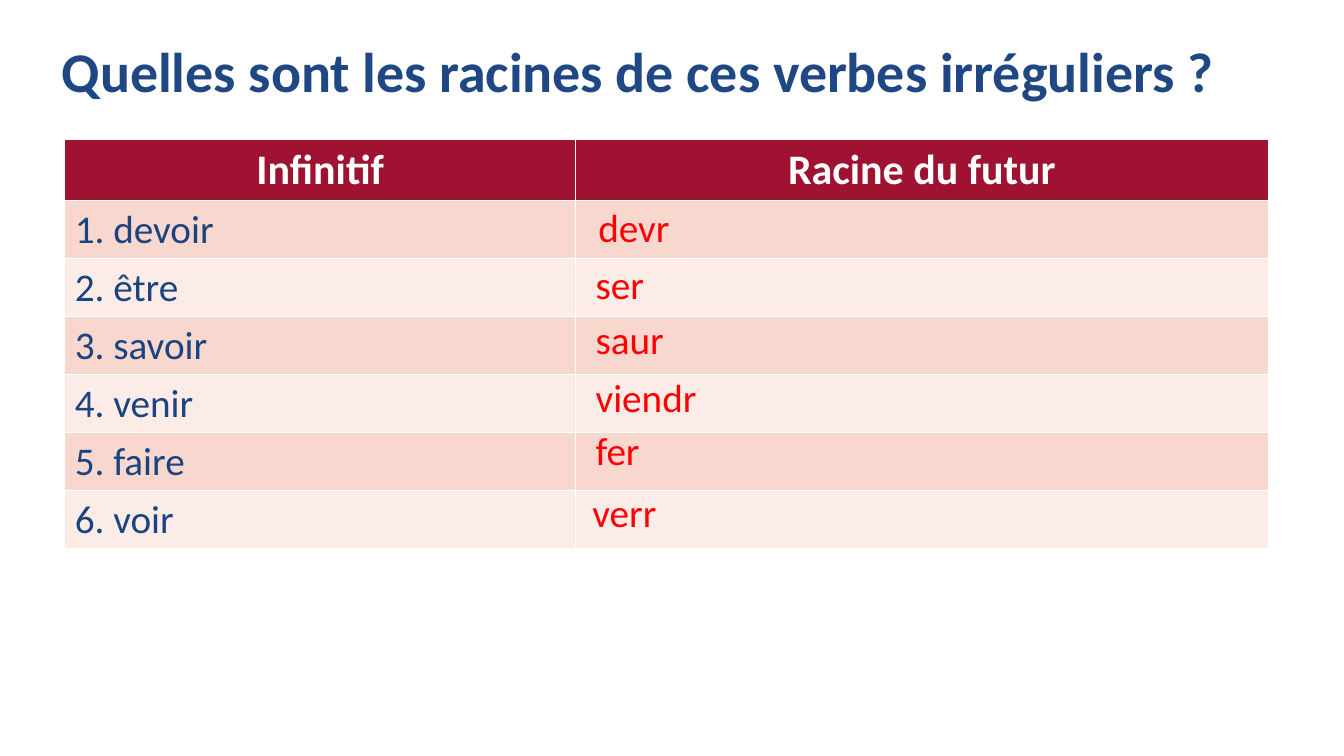
from pptx import Presentation
from pptx.dml.color import RGBColor
from pptx.enum.text import MSO_ANCHOR as Anchor, MSO_AUTO_SIZE as AutoSize, PP_ALIGN as Align
from pptx.util import Cm, Pt

FONT = "Calibri"
TITLE_BLUE, VERB_BLUE = "1E4783", "1A437F"
WHITE, CRIMSON, RED = "FFFFFF", "9F1231", "FF0000"
BANDS = ["F8D7CE", "FCECE8"]

HEADINGS = ["Infinitif", "Racine du futur"]
COLUMN_WIDTHS = [12.88, 17.45]
HEADER_HEIGHT, ROW_HEIGHT = 1.5, 1.44

# Each verb with its stem and the left and top of the stem's box, in cm
VERBS = [
    ("devoir", "devr", 14.83, 5.0),
    ("être", "ser", 14.76, 6.43),
    ("savoir", "saur", 14.76, 7.82),
    ("venir", "viendr", 14.76, 9.27),
    ("faire", "fer", 14.76, 10.62),
    ("voir", "verr", 14.68, 12.17),
]


def color(code):
    return RGBColor.from_string(code)


def write(frame, text, size, code, bold=False, align=Align.LEFT):
    frame.text = text
    para = frame.paragraphs[0]
    para.alignment = align
    font = para.font
    font.name, font.size, font.bold = FONT, Pt(size), bold
    font.color.rgb = color(code)
    return para


def fill_cell(cell, code):
    cell.fill.solid()
    cell.fill.fore_color.rgb = color(code)


def add_title(page, text):
    title = page.shapes.title
    title.left, title.top = Cm(1.3), Cm(1.02)
    title.width, title.height = Cm(30.66), Cm(1.73)
    frame = title.text_frame
    frame.auto_size = AutoSize.NONE
    frame.vertical_anchor = Anchor.MIDDLE
    write(frame, text, 40, TITLE_BLUE, bold=True).line_spacing = 0.9


def add_verb_table(page):
    height = HEADER_HEIGHT + len(VERBS) * ROW_HEIGHT
    table = page.shapes.add_table(
        len(VERBS) + 1, len(HEADINGS),
        Cm(1.63), Cm(3.51), Cm(sum(COLUMN_WIDTHS)), Cm(height)).table
    for column, width in zip(table.columns, COLUMN_WIDTHS):
        column.width = Cm(width)

    # Header row
    table.rows[0].height = Cm(HEADER_HEIGHT)
    for cell, heading in zip(table.rows[0].cells, HEADINGS):
        fill_cell(cell, CRIMSON)
        write(cell.text_frame, heading, 30, WHITE, bold=True, align=Align.CENTER)

    # Numbered verbs on alternating bands
    for number, (verb, *_) in enumerate(VERBS, start=1):
        row = table.rows[number]
        row.height = Cm(ROW_HEIGHT)
        for cell in row.cells:
            fill_cell(cell, BANDS[(number - 1) % 2])
        write(row.cells[0].text_frame, f"{number}. {verb}", 28, VERB_BLUE)


def add_stem(page, stem, left, top):
    box = page.shapes.add_textbox(Cm(left), Cm(top), Cm(16.31), Cm(ROW_HEIGHT))
    box.text_frame.word_wrap = True
    write(box.text_frame, stem, 28, RED)


def main():
    deck = Presentation()
    deck.slide_width, deck.slide_height = Cm(33.87), Cm(19.05)
    page = deck.slides.add_slide(deck.slide_layouts[5])

    add_title(page, "Quelles sont les racines de ces verbes irréguliers ?")
    add_verb_table(page)
    for _, stem, left, top in VERBS:
        add_stem(page, stem, left, top)

    deck.save("out.pptx")


if __name__ == "__main__":
    main()
